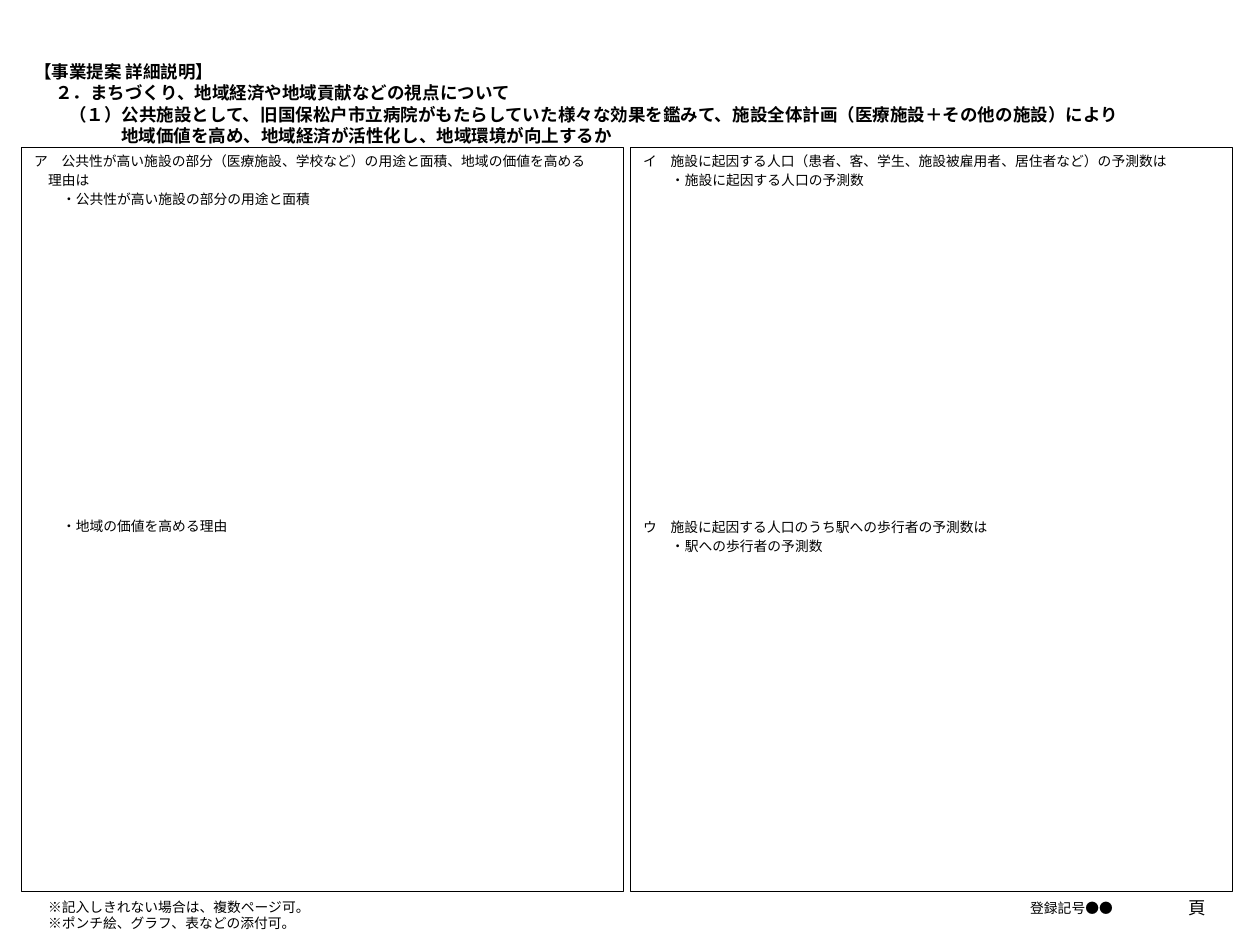
from pptx import Presentation
from pptx.dml.color import RGBColor as Rgb
from pptx.enum.text import MSO_ANCHOR as Anchor, MSO_AUTO_SIZE as Fit, PP_ALIGN as Align
from pptx.util import Emu, Pt
from lxml.etree import SubElement

INK = {"text": "000000", "line": "000000"}


def px(num):
    return Emu(num * 10160)


class Page:
    """Holds the text style and the current slide."""

    font = "Noto Sans CJK JP"
    size = 11
    big = 14

    def __init__(self, deck):
        self.slide = deck.slides.add_slide(deck.slide_layouts[3])
        self.body = iter(list(self.slide.placeholders)[1:])

    def place(self, shape, box):
        shape.left, shape.top, shape.width, shape.height = map(px, box)

    def letter(self, shape, rows, size, pitch, anchor, align=Align.LEFT, bold=False):
        frame = shape.text_frame
        frame.text = "\n".join(row[0] for row in rows)
        frame.word_wrap = True
        frame.auto_size = Fit.NONE
        frame.vertical_anchor = anchor
        frame.margin_left = frame.margin_right = px(13)
        frame.margin_top = frame.margin_bottom = px(6)
        for para, (_, dent, gap) in zip(frame.paragraphs, rows):
            para.alignment = align
            para.line_spacing = px(pitch)
            para.space_before = px(gap)
            prop = para._p.get_or_add_pPr()
            prop.set("marL", str(px(dent)))
            prop.set("indent", "0")
            SubElement(prop, prop.tag.replace("pPr", "buNone"))
            for run in para.runs:
                font = run.font
                font.name, font.size, font.bold = self.font, Pt(size), bold
                font.color.rgb = Rgb.from_string(INK["text"])
                east = SubElement(font._element, prop.tag.replace("pPr", "ea"))
                east.set("typeface", self.font)

    def title(self, box, rows):
        shape = self.slide.shapes.title
        self.place(shape, box)
        rows = [(text, dent, 0) for text, dent in rows]
        self.letter(shape, rows, self.big, 21, Anchor.MIDDLE, bold=True)

    def panel(self, box, rows):
        shape = next(self.body)
        self.place(shape, box)
        shape.line.color.rgb = Rgb.from_string(INK["line"])
        shape.line.width = Pt(0.75)
        self.letter(shape, rows, self.size, 16, Anchor.TOP)

    def note(self, box, texts, size=size, align=Align.LEFT):
        shape = self.slide.shapes.add_textbox(*map(px, box))
        rows = [(text, 0, 0) for text in texts]
        pitch = 16 if size == self.size else 21
        self.letter(shape, rows, size, pitch, Anchor.MIDDLE, align)


def main():
    deck = Presentation()
    deck.slide_width, deck.slide_height = px(1260), px(945)
    page = Page(deck)
    page.title((21, 54, 1205, 99), [
        ("【事業提案 詳細説明】", 0),
        ("２．まちづくり、地域経済や地域貢献などの視点について", 21),
        ("（１）公共施設として、旧国保松戸市立病院がもたらしていた様々な効果を鑑みて、"
         "施設全体計画（医療施設＋その他の施設）により", 35),
        ("地域価値を高め、地域経済が活性化し、地域環境が向上するか", 87),
    ])
    left = [
        ("ア　公共性が高い施設の部分（医療施設、学校など）の用途と面積、地域の価値を高める", 0, 3),
        ("理由は", 14, 3),
        ("・公共性が高い施設の部分の用途と面積", 28, 3),
        ("・地域の価値を高める理由", 28, 311),
    ]
    right = [
        ("イ　施設に起因する人口（患者、客、学生、施設被雇用者、居住者など）の予測数は", 0, 3),
        ("・施設に起因する人口の予測数", 28, 3),
        ("ウ　施設に起因する人口のうち駅への歩行者の予測数は", 0, 331),
        ("・駅への歩行者の予測数", 28, 3),
    ]
    for col, rows in enumerate((left, right)):
        page.panel((21 + col * 609, 147, 602, 744), rows)
    page.note((727, 883, 399, 50), ["登録記号●●"], align=Align.RIGHT)
    page.note((35, 890, 624, 50), [
        "※記入しきれない場合は、複数ページ可。",
        "※ポンチ絵、グラフ、表などの添付可。",
    ])
    page.note((1148, 883, 71, 50), ["頁"], page.big, Align.RIGHT)
    deck.save("out.pptx")


if __name__ == "__main__":
    main()
